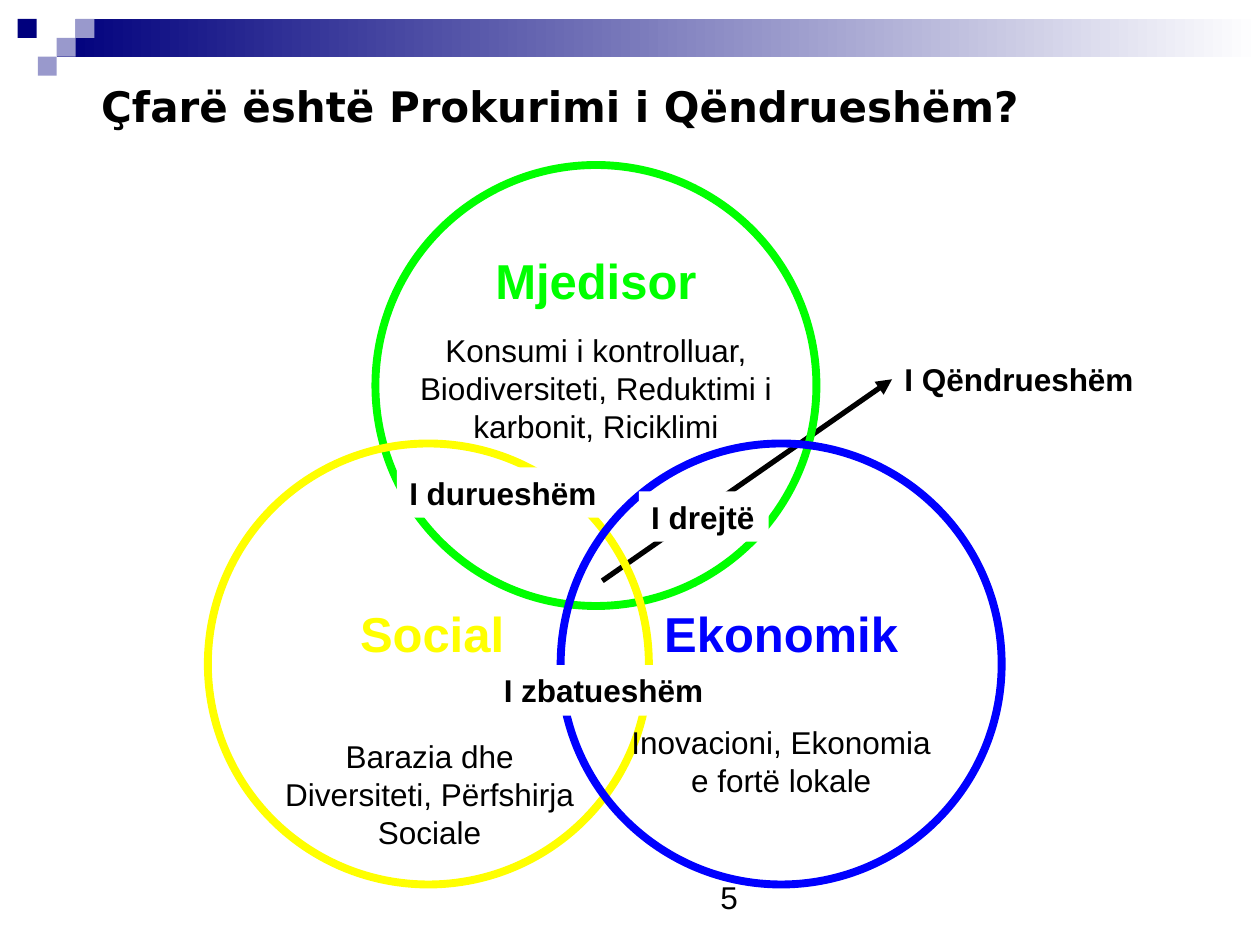
from lxml import etree
from pptx import Presentation, util as u
from pptx.dml.color import RGBColor
from pptx.enum import shapes, text
from pptx.oxml.ns import qn

NAVY, LILAC, WHITE, BLACK = "00007D", "9999CC", "FFFFFF", "000000"
GREEN, YELLOW, BLUE = "00FF00", "FFFF00", "0000FF"
SQUARE = 0.15
CIRCLE = 3.5


def rgb(value):
    return RGBColor.from_string(value)


def box(left, top, width, height):
    return [u.Inches(v) for v in (left, top, width, height)]


class Deck:
    font = "Arial"
    title_font = "DejaVu Sans"
    body_size = 18
    heading_size = 28

    def __init__(self):
        self.prs = Presentation()
        self.prs.slide_width, self.prs.slide_height = u.Inches(10), u.Inches(7.5)
        self.s = self.prs.slides.add_slide(self.prs.slide_layouts[5])

    def set_text(self, sp, words, size, color=BLACK, bold=False, center=False,
                 wrap=False, font=None):
        tf = sp.text_frame
        tf.word_wrap = wrap
        tf.auto_size = text.MSO_AUTO_SIZE.NONE
        tf.vertical_anchor = text.MSO_ANCHOR.TOP
        tf.text = words
        p = tf.paragraphs[0]
        p.alignment = text.PP_ALIGN.CENTER if center else text.PP_ALIGN.LEFT
        p.font.name, p.font.size = font or self.font, u.Pt(size)
        p.font.bold, p.font.color.rgb = bold, rgb(color)

    def title(self, words, *at):
        sp = self.s.shapes.title
        sp.left, sp.top, sp.width, sp.height = box(*at)
        self.set_text(sp, words, 24, bold=True, center=True, font=self.title_font)

    def text(self, words, *at, size=None, **style):
        sp = self.s.shapes.add_textbox(*box(*at))
        self.set_text(sp, words, size or self.body_size, **style)
        return sp

    def heading(self, words, color, *at):
        self.text(words, *at, size=self.heading_size, color=color,
                  bold=True, center=True)

    def label(self, words, *at, fill=WHITE):
        sp = self.text(words, *at, bold=True)
        if fill:
            sp.fill.solid()
            sp.fill.fore_color.rgb = rgb(fill)

    def shape(self, kind, *at):
        sp = self.s.shapes.add_shape(kind, *box(*at))
        sp.shadow.inherit = False
        return sp

    def square(self, left, top, color):
        sp = self.shape(shapes.MSO_SHAPE.RECTANGLE, left, top, SQUARE, SQUARE)
        sp.fill.solid()
        sp.fill.fore_color.rgb = rgb(color)
        sp.line.fill.background()

    def gradient_bar(self, start, end, *at):
        sp = self.shape(shapes.MSO_SHAPE.RECTANGLE, *at)
        sp.fill.gradient()
        sp.fill.gradient_angle = 0
        for stop, position, color in zip(sp.fill.gradient_stops, (0, 1), (start, end)):
            stop.position, stop.color.rgb = position, rgb(color)
        sp.line.fill.background()

    def ring(self, color, left, top):
        sp = self.shape(shapes.MSO_SHAPE.OVAL, left, top, CIRCLE, CIRCLE)
        sp.fill.background()
        sp.line.color.rgb, sp.line.width = rgb(color), u.Pt(4.5)

    def arrow(self, *ends):
        c = self.s.shapes.add_connector(shapes.MSO_CONNECTOR.STRAIGHT, *box(*ends))
        c.line.color.rgb, c.line.width = rgb(BLACK), u.Pt(3)
        props = c.element.spPr
        etree.SubElement(props.find(qn("a:ln")), qn("a:tailEnd"), type="triangle")
        etree.SubElement(props, qn("a:effectLst"))


def main():
    d = Deck()
    d.gradient_bar(NAVY, WHITE, 0.45, 0.15, 9.55, 0.3)
    for left, top, color in [(0.45, 0.15, WHITE), (0.6, 0.15, LILAC), (0.14, 0.15, NAVY),
                             (0.45, 0.3, LILAC), (0.3, 0.45, LILAC)]:
        d.square(left, top, color)
    d.text("5", 5.62, 6.92, 0.64, 0.4, wrap=True)
    d.arrow(4.78, 4.61, 7.08, 3.01)
    d.title("Çfarë është Prokurimi i Qëndrueshëm?", 0.68, 0.59, 7.53, 0.5)

    pillars = [
        (GREEN, (2.98, 1.31), "Mjedisor", (3.15, 1.94, 3.16, 0.44),
         "Konsumi i kontrolluar, Biodiversiteti, Reduktimi i karbonit, Riciklimi",
         (3.08, 2.58, 3.3, 1.01)),
        (YELLOW, (1.65, 3.52), "Social", (2.71, 4.74, 1.44, 0.44),
         "Barazia dhe Diversiteti, Përfshirja Sociale", (2.03, 5.8, 2.76, 1.01)),
        (BLUE, (4.45, 3.52), "Ekonomik", (4.98, 4.74, 2.44, 0.44),
         "Inovacioni, Ekonomia e fortë lokale", (4.86, 5.69, 2.68, 0.71)),
    ]
    for color, corner, name, name_at, topics, topics_at in pillars:
        d.ring(color, *corner)
        d.heading(name, color, *name_at)
        d.text(topics, *topics_at, center=True, wrap=True)

    d.label("I durueshëm", 3.15, 3.71, 1.7, 0.4)
    d.label("I drejtë", 5.07, 3.9, 1.03, 0.4)
    d.label("I zbatueshëm", 3.9, 5.28, 1.8, 0.4)
    d.label("I Qëndrueshëm", 7.08, 2.81, 2.04, 0.4, fill=None)
    d.prs.save("out.pptx")


if __name__ == "__main__":
    main()
